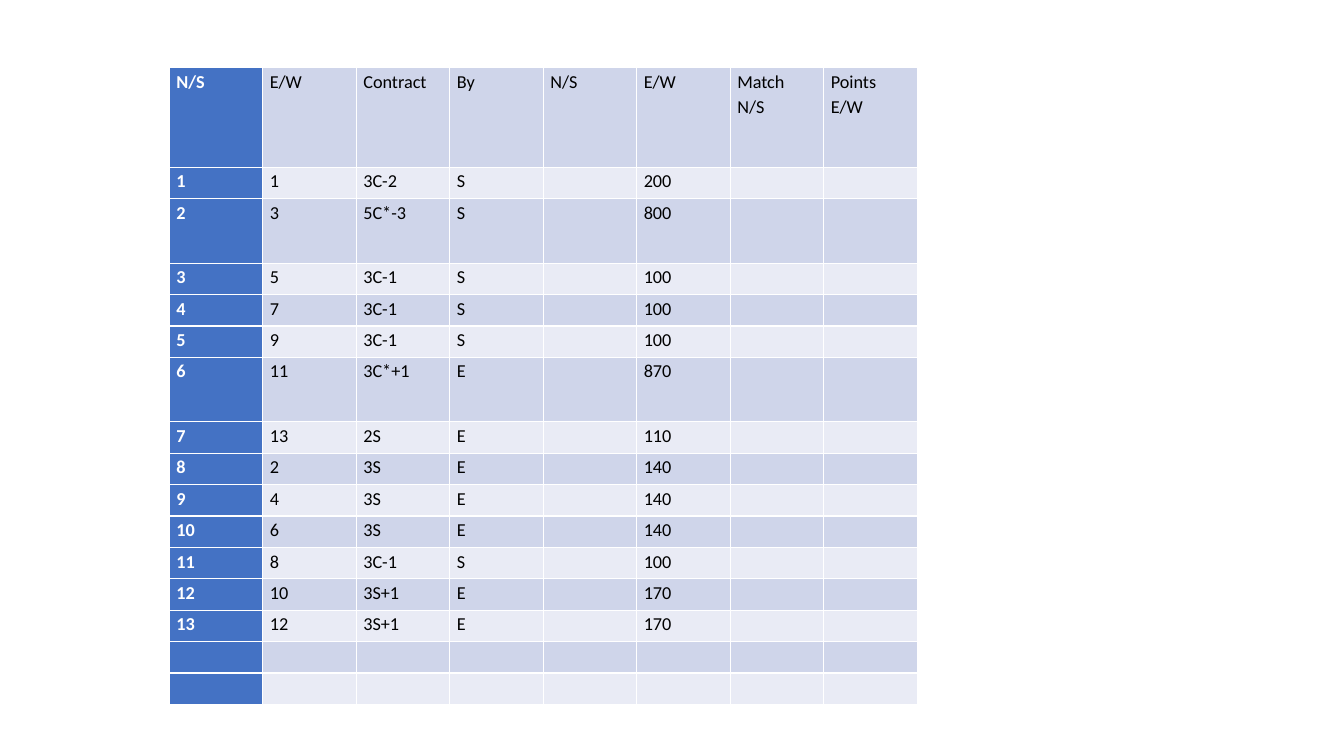
from lxml import etree
from pptx import Presentation
from pptx.dml.color import RGBColor
from pptx.oxml.ns import qn
from pptx.util import Inches, Pt

WHITE = RGBColor(0xFF, 0xFF, 0xFF)
BLACK = RGBColor(0x00, 0x00, 0x00)
BLUE = RGBColor(0x44, 0x72, 0xC4)
DARK_BAND = RGBColor(0xCF, 0xD5, 0xEA)
LIGHT_BAND = RGBColor(0xE9, 0xEB, 0xF5)

HEADINGS = ["N/S", "E/W", "Contract", "By", "N/S", "E/W", "Match\nN/S", "Points\nE/W"]
# East/West pair, contract, declarer, East/West score; North/South pairs run from 1
RESULTS = [
    ("1", "3C-2", "S", "200"),
    ("3", "5C*-3", "S", "800"),
    ("5", "3C-1", "S", "100"),
    ("7", "3C-1", "S", "100"),
    ("9", "3C-1", "S", "100"),
    ("11", "3C*+1", "E", "870"),
    ("13", "2S", "E", "110"),
    ("2", "3S", "E", "140"),
    ("4", "3S", "E", "140"),
    ("6", "3S", "E", "140"),
    ("8", "3C-1", "S", "100"),
    ("10", "3S+1", "E", "170"),
    ("12", "3S+1", "E", "170"),
]
SPARE_ROWS = 2

TABLE_LEFT, TABLE_TOP, TABLE_WIDTH, TABLE_HEIGHT = 1.68, 0.67, 7.42, 6.32
TALL_ROWS = {0: 0.99, 2: 0.64, 6: 0.64}


def write_text(frame, text, *, font, size, color, bold=False, line_spacing=1.0):
    for index, line in enumerate(text.split("\n")):
        para = frame.paragraphs[0] if index == 0 else frame.add_paragraph()
        para.line_spacing = line_spacing
        span = para.add_run()
        span.text = line
        span.font.name = font
        span.font.size = Pt(size)
        span.font.bold = bold
        span.font.color.rgb = color


def add_borders(cell, color, width):
    properties = cell._tc.get_or_add_tcPr()
    for side in ("lnL", "lnR", "lnT", "lnB"):
        line = etree.SubElement(properties, qn(f"a:{side}"), w=str(Pt(width)))
        fill = etree.SubElement(line, qn("a:solidFill"))
        etree.SubElement(fill, qn("a:srgbClr"), val=str(color))


class ScoreSheet:
    font = "Calibri"
    size = 13
    line_spacing = 1.15
    side_margin = 0.07
    border_width = 1

    def __init__(self, page):
        self.page = page

    def add_table(self, rows, left, top, width, height, tall_rows):
        """Add a table whose rows share evenly the height the tall rows leave."""
        columns = len(rows[0])
        frame = self.page.shapes.add_table(
            len(rows), columns, Inches(left), Inches(top), Inches(width), Inches(height))
        table = frame.table
        table.first_row = False
        table.horz_banding = False
        for column in table.columns:
            column.width = Inches(width / columns)
        plain_height = (height - sum(tall_rows.values())) / (len(rows) - len(tall_rows))
        for row_index, values in enumerate(rows):
            table.rows[row_index].height = Inches(tall_rows.get(row_index, plain_height))
            band = LIGHT_BAND if row_index % 2 else DARK_BAND
            for column_index, text in enumerate(values):
                is_pair = column_index == 0
                self.fill_cell(table.cell(row_index, column_index), text,
                               fill=BLUE if is_pair else band,
                               color=WHITE if is_pair else BLACK, bold=is_pair)

    def fill_cell(self, cell, text, fill, color, bold):
        cell.margin_left = cell.margin_right = Inches(self.side_margin)
        cell.margin_top = cell.margin_bottom = 0
        add_borders(cell, WHITE, self.border_width)
        cell.fill.solid()
        cell.fill.fore_color.rgb = fill
        if text:
            write_text(cell.text_frame, text, font=self.font, size=self.size,
                       color=color, bold=bold, line_spacing=self.line_spacing)


def main():
    deck = Presentation()
    deck.slide_width, deck.slide_height = Inches(13.33), Inches(7.5)
    page = deck.slides.add_slide(deck.slide_layouts[6])

    rows = [HEADINGS]
    for pair, (opponents, contract, declarer, score) in enumerate(RESULTS, start=1):
        rows.append([str(pair), opponents, contract, declarer, "", score, "", ""])
    rows += [[""] * len(HEADINGS)] * SPARE_ROWS

    ScoreSheet(page).add_table(
        rows, TABLE_LEFT, TABLE_TOP, TABLE_WIDTH, TABLE_HEIGHT, TALL_ROWS)
    deck.save("out.pptx")


if __name__ == "__main__":
    main()
